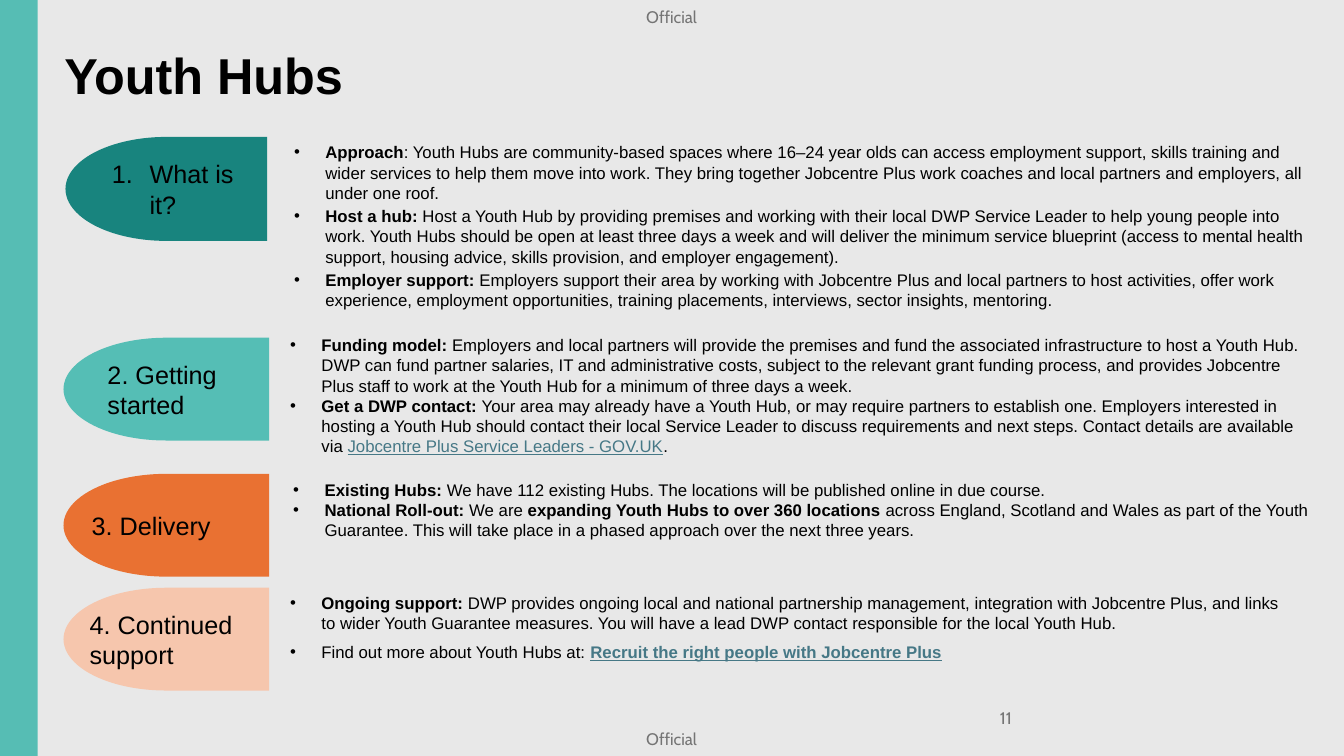
from lxml import etree
from pptx import Presentation
from pptx import util as u
from pptx.dml.color import RGBColor
from pptx.enum import shapes, text
from pptx.oxml import ns

COLOURS = {
    "page": "E8E8E8", "band": "56BDB4", "ink": "000000", "link": "467886",
    "marking": "747474", "number": "757575", "what": "18847E",
    "start": "55BEB5", "delivery": "E97132", "support": "F6C6AD",
}
PLAIN = {"bold": False, "underline": False, "colour": "ink"}
BOLD = {**PLAIN, "bold": True}
LINK = {"bold": False, "underline": True, "colour": "link"}
BOLD_LINK = {**LINK, "bold": True}

SECTIONS = [
    {
        "colour": "what", "pill": (1.65, 3.45, 5.08, 2.62), "label": "What is it?",
        "label_box": (0.92, 4.09), "number": True,
        "list": (7.16, 3.45, 26.14, 3.0), "gap": 2.4,
        "points": [
            [("Approach", BOLD), (": Youth Hubs are community‑based spaces where 16–24 year olds can access employment support, skills training and wider services to help them move into work. They bring together Jobcentre Plus work coaches and local partners and employers, all under one roof.", PLAIN)],
            [("Host a hub: ", BOLD), ("Host a Youth Hub by providing premises and working with their local DWP Service Leader to help young people into work. Youth Hubs should be open at least three days a week and will deliver the minimum service blueprint (access to mental health support, housing advice, skills provision, and employer engagement).", PLAIN)],
            [("Employer support: ", BOLD), ("Employers support their area by working with Jobcentre Plus and local partners to host activities, offer work experience, employment opportunities, training placements, interviews, sector insights, mentoring.", PLAIN)],
        ],
    },
    {
        "colour": "start", "pill": (1.6, 8.51, 5.18, 2.59), "label": "2. Getting started",
        "label_box": (0.86, 4.09), "number": False,
        "list": (7.06, 8.31, 26.19, 3.33), "gap": 0,
        "points": [
            [("Funding model: ", BOLD), ("Employers and local partners will provide the premises and fund the associated infrastructure to host a Youth Hub. DWP can fund partner salaries, IT and administrative costs, subject to the relevant grant funding process, and provides Jobcentre Plus staff to work at the Youth Hub for a minimum of three days a week.", PLAIN)],
            [("Get a DWP contact: ", BOLD), ("Your area may already have a Youth Hub, or may require partners to establish one. Employers interested in hosting a Youth Hub should contact their local Service Leader to discuss requirements and next steps. Contact details are available via ", PLAIN), ("Jobcentre Plus Service Leaders - GOV.UK", LINK), (".", PLAIN)],
        ],
    },
    {
        "colour": "delivery", "pill": (1.6, 11.94, 5.18, 2.59), "label": "3. Delivery",
        "label_box": (0.46, 5.08), "number": False,
        "list": (7.14, 11.96, 26.31, 1.8), "gap": 0,
        "points": [
            [("Existing Hubs: ", BOLD), ("We have 112 existing Hubs. The locations will be published online in due course.", PLAIN)],
            [("National Roll-out: ", BOLD), ("We are ", PLAIN), ("expanding Youth Hubs to over 360 locations ", BOLD), ("across England, Scotland and Wales as part of the Youth Guarantee. This will take place in a phased approach over the next three years.", PLAIN)],
        ],
    },
    {
        "colour": "support", "pill": (1.6, 14.81, 5.18, 2.59), "label": "4. Continued support",
        "label_box": (0.41, 5.08), "number": False,
        "list": (7.06, 14.81, 25.81, 2.06), "gap": 6,
        "points": [
            [("Ongoing support: ", BOLD), ("DWP provides ongoing local and national partnership management, integration with Jobcentre Plus, and links to wider Youth Guarantee measures. You will have a lead DWP contact responsible for the local Youth Hub.", PLAIN)],
            [("Find out more about Youth Hubs at: ", PLAIN), ("Recruit the right people with Jobcentre Plus", BOLD_LINK)],
        ],
    },
]


def apply(target, **values):
    """Set every given attribute on the target."""
    for name, value in values.items():
        setattr(target, name, value)


def rgb(name):
    """Return the named colour."""
    return RGBColor.from_string(COLOURS[name])


def place(item, box):
    """Move an item to a box given in centimetres."""
    apply(item, **dict(zip(("left", "top", "width", "height"), map(u.Cm, box))))


def set_frame(item, anchor=text.MSO_ANCHOR.TOP, wrap=True, margins=(0.25, 0.13)):
    """Format the text frame of an item and return it."""
    side, edge = map(u.Cm, margins)
    frame = item.text_frame
    apply(frame, auto_size=text.MSO_AUTO_SIZE.NONE, word_wrap=wrap,
          vertical_anchor=anchor, margin_left=side, margin_right=side,
          margin_top=edge, margin_bottom=edge)
    return frame


def add_marker(para, indent, tag, **attributes):
    """Give a paragraph a hanging bullet or number."""
    properties = para._p.get_or_add_pPr()
    properties.set("marL", str(u.Cm(indent)))
    properties.set("indent", str(-u.Cm(indent)))
    etree.SubElement(properties, ns.qn("a:buFont"), typeface="Arial")
    etree.SubElement(properties, ns.qn(tag), **attributes)


def write(para, spans, size, font="Arial", gap=0):
    """Fill a paragraph with formatted spans."""
    apply(para, alignment=text.PP_ALIGN.LEFT, line_spacing=1.0,
          space_before=u.Pt(gap), space_after=u.Pt(0))
    for words, style in spans:
        span = para.add_run()
        span.text = words
        apply(span.font, size=u.Pt(size), name=font,
              bold=style["bold"], underline=style["underline"])
        span.font.color.rgb = rgb(style["colour"])


def add_block(page, kind, box, colour):
    """Draw a flat filled shape."""
    block = page.shapes.add_shape(kind, *map(u.Cm, box))
    block.shadow.inherit = False
    block.fill.solid()
    block.fill.fore_color.rgb = rgb(colour)
    block.line.fill.background()
    return block


def add_small_print(page, box, words, colour, margins):
    """Write a marking or page number in its box."""
    note = page.shapes.add_textbox(*map(u.Cm, box))
    frame = set_frame(note, wrap=False, margins=margins)
    write(frame.paragraphs[0], [(words, {**PLAIN, "colour": colour})], 12, "Cabin")


def add_surround(page, width, height):
    """Draw the background, side band, markings and page number."""
    page.background.fill.solid()
    page.background.fill.fore_color.rgb = rgb("page")
    add_block(page, shapes.MSO_SHAPE.RECTANGLE, (0, 0, 0.95, height), "band")
    for top in (0.18, height - 0.69):
        add_small_print(page, (width / 2 - 0.65, top, 1.42, 0.51), "Official", "marking", (0, 0))
    add_small_print(page, (25.07, height - 1.35, 0.6, 0.76), "11", "number", (0.13, 0.13))


def add_heading(title, box):
    """Write the slide title in its placeholder."""
    place(title, box)
    frame = set_frame(title, text.MSO_ANCHOR.MIDDLE)
    write(frame.paragraphs[0], [("Youth Hubs", BOLD)], 36)


def add_pill(page, box, section):
    """Draw a section pill and its label."""
    pill = add_block(page, shapes.MSO_SHAPE.FLOWCHART_DELAY, box, section["colour"])
    pill.rotation = 180
    left, top, _, height = box
    shift, width = section["label_box"]
    label = page.shapes.add_textbox(*map(u.Cm, (left + shift, top, width, height)))
    para = set_frame(label, text.MSO_ANCHOR.MIDDLE).paragraphs[0]
    if section["number"]:
        add_marker(para, 0.95, "a:buAutoNum", type="arabicPeriod")
    write(para, [(section["label"], PLAIN)], 18)


def add_points(body, box, section):
    """Write a section's bullet list in its placeholder."""
    place(body, box)
    frame = set_frame(body)
    for index, spans in enumerate(section["points"]):
        para = frame.add_paragraph() if index else frame.paragraphs[0]
        add_marker(para, 0.79, "a:buChar", char="•")
        write(para, spans, 12, gap=section["gap"] if index else 0)


def main():
    """Build and save the deck."""
    deck = Presentation()
    width, height = 33.87, 19.05
    apply(deck, slide_width=u.Cm(width), slide_height=u.Cm(height))
    page = deck.slides.add_slide(deck.slide_layouts.get_by_name("Comparison"))
    title, *bodies = page.placeholders
    add_surround(page, width, height)
    add_heading(title, (1.37, 0.97, 31.93, 1.8))
    for body, section in zip(bodies, SECTIONS):
        add_pill(page, section["pill"], section)
        add_points(body, section["list"], section)
    deck.save("out.pptx")


if __name__ == "__main__":
    main()
